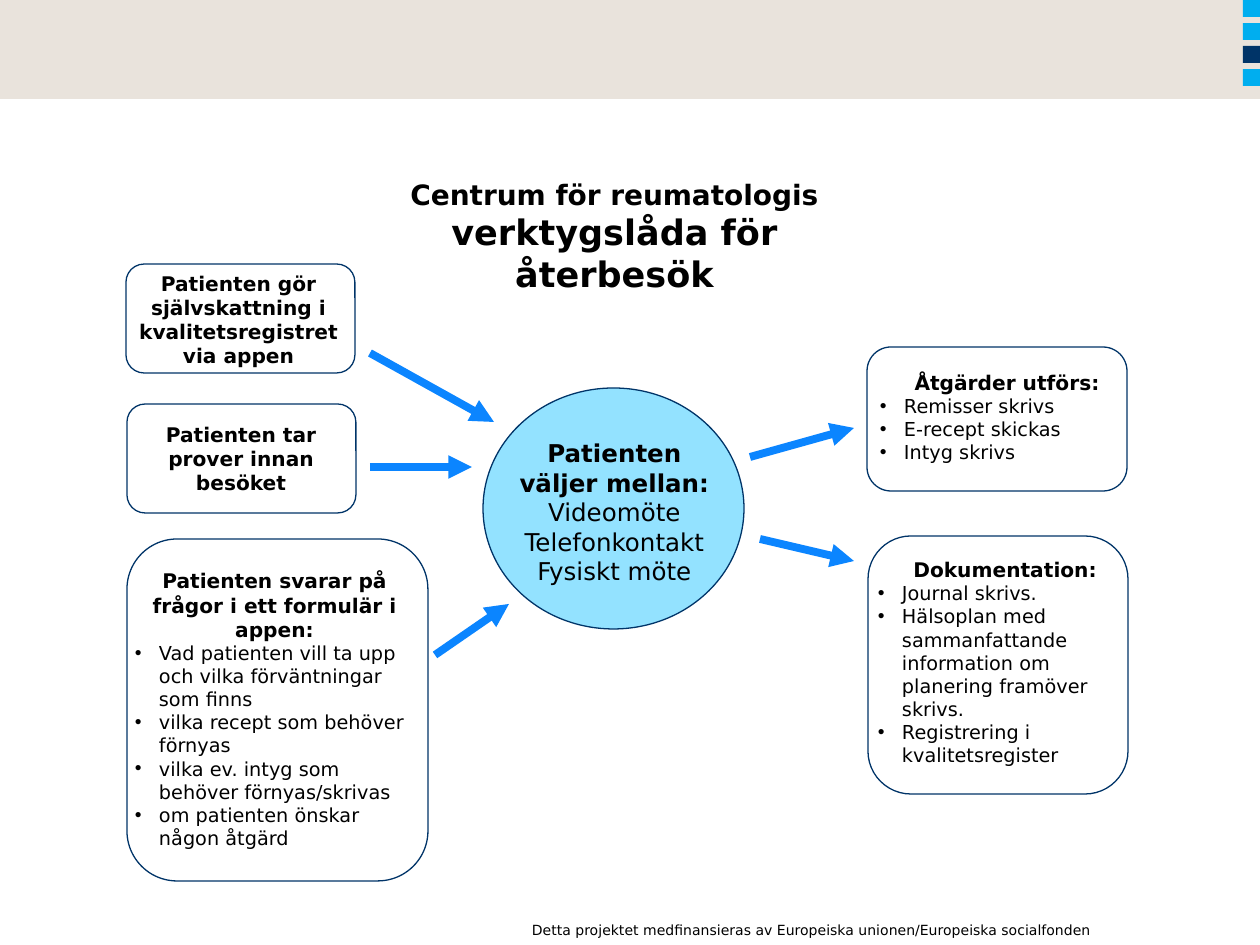
import pptx
import pptx.dml.color
import pptx.enum.shapes
import pptx.enum.text
import pptx.oxml.ns
import pptx.util
from lxml import etree

EMU_PER_PX = 914400 / 126
FONT = "DejaVu Sans"
COLOURS = {
    "band": "E9E3DC",
    "cyan": "00AEEF",
    "navy": "003468",
    "circle": "93E2FF",
    "arrow": "0B85FF",
    "text": "000000",
}
SHAPES = pptx.enum.shapes.MSO_SHAPE
ALIGN = pptx.enum.text.PP_ALIGN
ANCHOR = pptx.enum.text.MSO_ANCHOR

HEADING = {"size": 11.5, "bold": True}
BULLET = {"size": 11, "bold": False}
CHOICE_HEADING = {"size": 14, "bold": True}
CHOICE = {"size": 14, "bold": False}

# Frame place, text place, heading, bullets
CARDS = [
    ((126, 264, 229, 109), (122, 268, 233, 103),
     "Patienten gör självskattning i kvalitetsregistret via appen", []),
    ((127, 404, 229, 109), (125, 407, 232, 103),
     "Patienten tar prover innan besöket", []),
    ((127, 539, 301, 342), (126, 539, 297, 340),
     "Patienten svarar på frågor i ett formulär i appen:",
     ["Vad patienten vill ta upp och vilka förväntningar som finns",
      "vilka recept som behöver förnyas",
      "vilka ev. intyg som behöver förnyas/skrivas",
      "om patienten önskar någon åtgärd"]),
    ((867, 347, 260, 144), (871, 358, 272, 118),
     "Åtgärder utförs:",
     ["Remisser skrivs", "E-recept skickas", "Intyg skrivs"]),
    ((868, 536, 260, 258), (869, 520, 272, 284),
     "Dokumentation:",
     ["Journal skrivs.",
      "Hälsoplan med sammanfattande information om planering framöver skrivs.",
      "Registrering i kvalitetsregister"]),
]

# Start and end of each arrow
ARROWS = [
    (370, 353, 494, 422),
    (370, 467, 472, 467),
    (435, 655, 509, 604),
    (750, 457, 854, 428),
    (760, 539, 854, 561),
]


def px(length):
    return pptx.util.Emu(round(length * EMU_PER_PX))


def colour(name):
    return pptx.dml.color.RGBColor.from_string(COLOURS[name])


def add_box(slide, kind, place, fill=None, line=None):
    box = slide.shapes.add_shape(kind, *map(px, place))
    box.shadow.inherit = False
    if fill:
        box.fill.solid()
        box.fill.fore_color.rgb = colour(fill)
    else:
        box.fill.background()
    if line:
        box.line.color.rgb = colour(line)
        box.line.width = pptx.util.Pt(0.75)
    else:
        box.line.fill.background()
    return box


def add_span(para, text, size, bold):
    span = para.add_run()
    span.text = text
    values = {"name": FONT, "size": pptx.util.Pt(size), "bold": bold}
    for name, value in values.items():
        setattr(span.font, name, value)
    span.font.color.rgb = colour("text")


def add_bullet(para, indent=24):
    properties = para._p.get_or_add_pPr()
    properties.set("marL", str(px(indent)))
    properties.set("indent", str(-px(indent)))
    for tag, name, value in (("a:buFont", "typeface", "Arial"),
                             ("a:buChar", "char", "•")):
        etree.SubElement(properties, pptx.oxml.ns.qn(tag)).set(name, value)


def add_label(slide, place, lines):
    """Each line is its text, its format and whether it has a bullet."""
    frame = add_box(slide, SHAPES.FLOWCHART_PROCESS, place).text_frame
    values = {
        "word_wrap": True, "vertical_anchor": ANCHOR.MIDDLE,
        "margin_left": px(9), "margin_right": px(9),
        "margin_top": px(5), "margin_bottom": px(5),
    }
    for name, value in values.items():
        setattr(frame, name, value)
    for index, (text, style, bulleted) in enumerate(lines):
        para = frame.add_paragraph() if index else frame.paragraphs[0]
        para.alignment = ALIGN.LEFT if bulleted else ALIGN.CENTER
        if bulleted:
            add_bullet(para)
        add_span(para, text, **style)


def add_card(slide, frame_place, text_place, heading, bullets):
    add_box(slide, SHAPES.ROUNDED_RECTANGLE, frame_place, line="navy")
    lines = [(heading, HEADING, False)]
    lines += [(text, BULLET, True) for text in bullets]
    add_label(slide, text_place, lines)


def add_arrow(slide, ends):
    arrow = slide.shapes.add_connector(
        pptx.enum.shapes.MSO_CONNECTOR.STRAIGHT, *map(px, ends))
    arrow.line.color.rgb = colour("arrow")
    arrow.line.width = pptx.util.Pt(4.5)
    head = etree.SubElement(arrow.line._get_or_add_ln(),
                            pptx.oxml.ns.qn("a:tailEnd"))
    head.set("type", "triangle")
    etree.SubElement(arrow._element.spPr, pptx.oxml.ns.qn("a:effectLst"))


def set_title(slide):
    title = slide.shapes.title
    places = zip(("left", "top", "width", "height"), (345, 171, 539, 184))
    for name, value in places:
        setattr(title, name, px(value))
    values = {
        "word_wrap": True, "vertical_anchor": ANCHOR.TOP,
        "auto_size": pptx.enum.text.MSO_AUTO_SIZE.NONE,
    }
    for name, value in values.items():
        setattr(title.text_frame, name, value)
    para = title.text_frame.paragraphs[0]
    para.alignment = ALIGN.CENTER
    add_span(para, "Centrum för reumatologis ", 16, True)
    add_span(para, "verktygslåda för återbesök", 20, True)


def add_footer(slide):
    box = slide.shapes.add_textbox(*map(px, (505, 915, 599, 30)))
    box.text_frame.word_wrap = True
    para = box.text_frame.paragraphs[0]
    para.alignment = ALIGN.RIGHT
    add_span(para, "Detta projektet medfinansieras av Europeiska unionen/"
                   "Europeiska socialfonden", 8, False)


def main():
    deck = pptx.Presentation()
    deck.slide_width, deck.slide_height = px(1260), px(945)
    slide = deck.slides.add_slide(deck.slide_layouts[5])

    # Top band with its column of squares
    add_box(slide, SHAPES.RECTANGLE, (0, 0, 1260, 99), fill="band")
    for row, name in enumerate(("cyan", "cyan", "navy", "cyan")):
        add_box(slide, SHAPES.RECTANGLE, (1243, 23 * row, 17, 17), fill=name)

    set_title(slide)
    add_footer(slide)

    # Central choice
    add_box(slide, SHAPES.OVAL, (483, 388, 261, 241), "circle", "navy")
    choices = ("Videomöte", "Telefonkontakt", "Fysiskt möte")
    add_label(slide, (500, 442, 229, 140),
              [("Patienten väljer mellan:", CHOICE_HEADING, False)]
              + [(text, CHOICE, False) for text in choices])

    # Steps before and after the choice
    for card in CARDS:
        add_card(slide, *card)
    for ends in ARROWS:
        add_arrow(slide, ends)

    deck.save("out.pptx")


if __name__ == "__main__":
    main()
